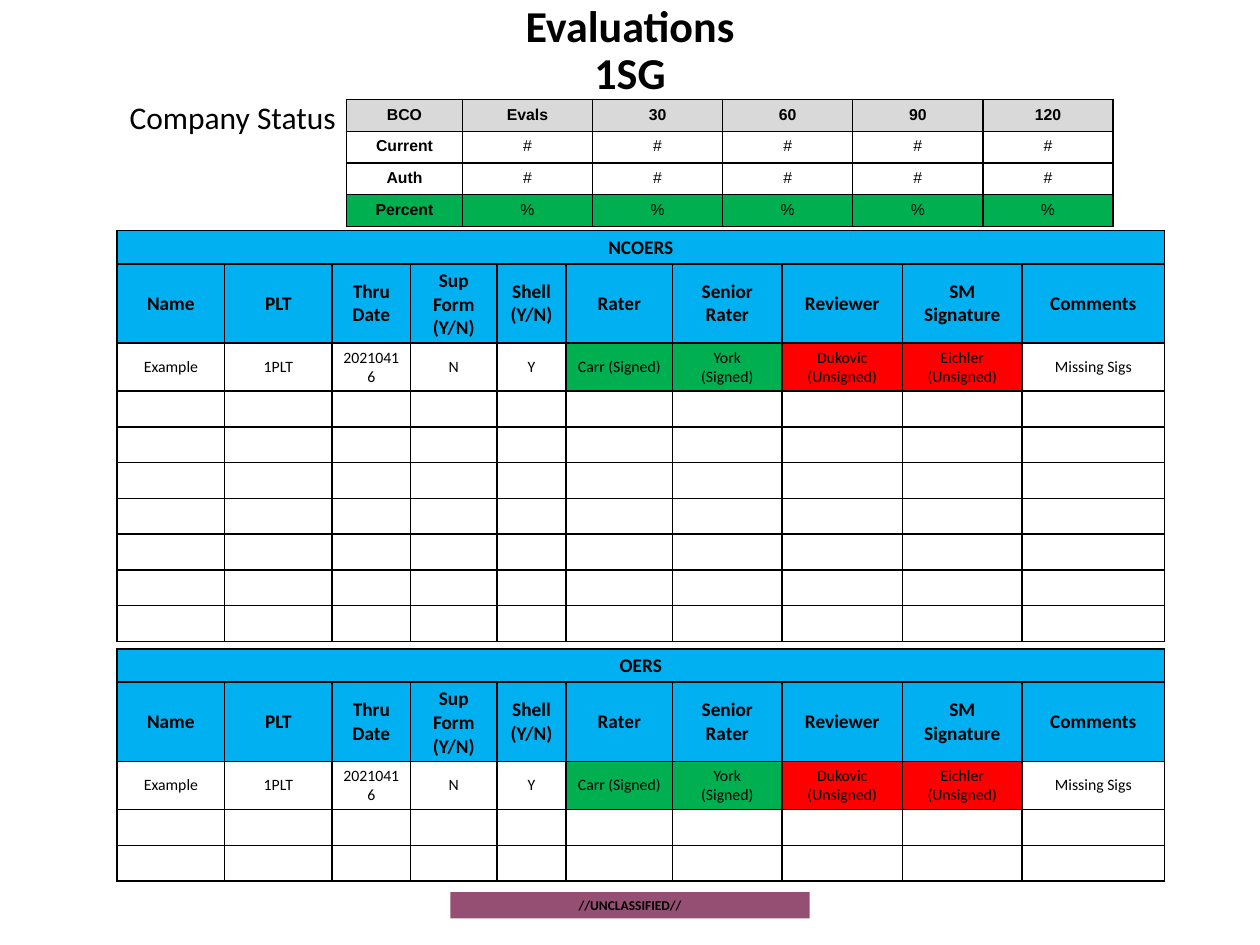
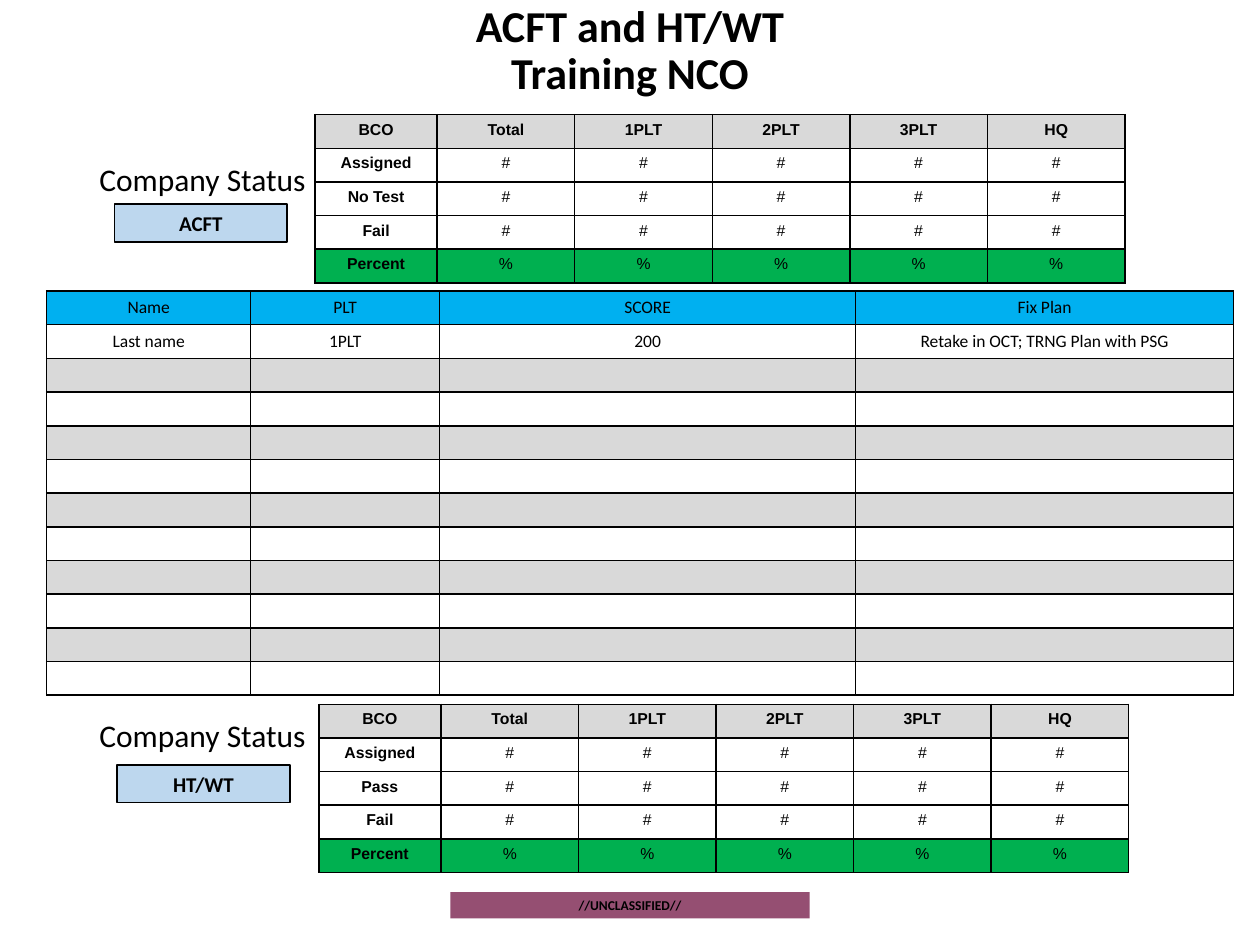
from lxml import etree
from pptx import Presentation
from pptx.dml.color import RGBColor
from pptx.enum.shapes import MSO_SHAPE
from pptx.enum.text import MSO_ANCHOR, PP_ALIGN
from pptx.oxml.ns import qn
from pptx.util import Inches, Pt

RECTANGLE = MSO_SHAPE.RECTANGLE
TOP, MIDDLE = MSO_ANCHOR.TOP, MSO_ANCHOR.MIDDLE
LEFT, CENTER = PP_ALIGN.LEFT, PP_ALIGN.CENTER

BLACK = RGBColor(0x00, 0x00, 0x00)
WHITE = RGBColor(0xFF, 0xFF, 0xFF)
GRAY = RGBColor(0xD9, 0xD9, 0xD9)
GREEN = RGBColor(0x00, 0xB0, 0x50)
RED = RGBColor(0xFF, 0x00, 0x00)
SKY = RGBColor(0x00, 0xB0, 0xF0)
PALE_BLUE = RGBColor(0xBD, 0xD7, 0xEE)
PLUM = RGBColor(0x95, 0x4F, 0x72)

BODY_FONT, STATUS_FONT = "Calibri", "Arial"
SLIDE_WIDTH, SLIDE_HEIGHT = Inches(10), Inches(7.5)
BLANK_LAYOUT = 6
WIDE_MARGINS = (Inches(0.1), Inches(0.05))
TIGHT_MARGINS = (Inches(0.07), Inches(0.04))

EVALUATION_HEADS = ["Name", "PLT", "Thru Date", "Sup Form (Y/N)", "Shell (Y/N)",
                    "Rater", "Senior Rater", "Reviewer", "SM Signature", "Comments"]
EVALUATION_EXAMPLE = ["Example", "1PLT", "20210416", "N", "Y", "Carr (Signed)",
                      "York\n(Signed)", "Dukovic\n(Unsigned)",
                      "Eichler\n(Unsigned)", "Missing Sigs"]
EVALUATION_COLUMNS = [8.53, 8.53, 6.23, 6.87, 5.48, 8.45, 8.69, 9.56, 9.5, 11.3]
PLATOON_HEADS = ["BCO", "Total", "1PLT", "2PLT", "3PLT", "HQ"]


def across(percent):
    """Return a share of the slide's width."""
    return round(SLIDE_WIDTH * percent / 100)


def down(percent):
    """Return a share of the slide's height."""
    return round(SLIDE_HEIGHT * percent / 100)


def place(left, top, width, height):
    """Turn percentages of the slide into a position and a size."""
    return across(left), down(top), across(width), down(height)


def set_margins(target, margins):
    """Set the side margins and the upper and lower margins."""
    target.margin_left = target.margin_right = margins[0]
    target.margin_top = target.margin_bottom = margins[1]


def style_text(frame, size, bold=False, font=BODY_FONT, align=CENTER):
    """Format every paragraph of a text frame, empty ones included."""
    for para in frame.paragraphs:
        para.alignment = align
        for span in para.runs:
            span.font.name = font
            span.font.size = Pt(size)
            span.font.bold = bold
            span.font.color.rgb = BLACK
        if not para.runs:
            etree.SubElement(para._p, qn("a:endParaRPr"), sz=str(size * 100))


def add_text(slide, area, text, size, bold=False, align=LEFT, anchor=TOP):
    """Add a text box and return its text frame."""
    frame = slide.shapes.add_textbox(*area).text_frame
    frame.word_wrap = True
    frame.vertical_anchor = anchor
    frame.text = text
    style_text(frame, size, bold, align=align)
    return frame


def add_bar(slide, area, text, size, fill, outlined=False):
    """Add a filled rectangle with a bold centred label."""
    bar = slide.shapes.add_shape(RECTANGLE, *area)
    bar.shadow.inherit = False
    bar.fill.solid()
    bar.fill.fore_color.rgb = fill
    if outlined:
        bar.line.color.rgb = BLACK
        bar.line.width = Pt(1)
    else:
        bar.line.fill.background()
    frame = bar.text_frame
    frame.word_wrap = True
    frame.vertical_anchor = MIDDLE
    set_margins(frame, TIGHT_MARGINS)
    frame.text = text
    style_text(frame, size, bold=True)


def add_borders(cell):
    """Draw a black line of one point on all sides of a cell."""
    properties = cell._tc.get_or_add_tcPr()
    for side in ("lnL", "lnR", "lnT", "lnB"):
        line = etree.SubElement(properties, qn(f"a:{side}"), w=str(Pt(1)))
        color = etree.SubElement(line, qn("a:solidFill"))
        etree.SubElement(color, qn("a:srgbClr"), val=str(BLACK))


def add_grid(slide, corner, columns, heights, texts, look, font=BODY_FONT,
             anchor=MIDDLE, margins=WIDE_MARGINS):
    """Add a table; look gives the fill, size and weight of each cell."""
    area = place(*corner, sum(columns), sum(heights))
    table = slide.shapes.add_table(len(heights), len(columns), *area).table
    table.first_row = table.horz_banding = False
    for column, width in zip(table.columns, columns):
        column.width = across(width)
    for row, height in zip(table.rows, heights):
        row.height = down(height)
    for r in range(len(heights)):
        for c in range(len(columns)):
            cell = table.cell(r, c)
            if r < len(texts) and c < len(texts[r]):
                cell.text = texts[r][c]
            fill, size, bold = look(r, c)
            set_margins(cell, margins)
            cell.vertical_anchor = anchor
            add_borders(cell)
            cell.fill.solid()
            cell.fill.fore_color.rgb = fill
            style_text(cell.text_frame, size, bold, font)
    return table


def add_status(slide, corner, columns, row_height, heads, counts):
    """Add a company status table with a green percent row."""
    values = len(heads) - 1
    texts = [heads]
    texts += [[name] + ["#"] * values for name in counts]
    texts.append(["Percent"] + ["%"] * values)
    fills = [GRAY] + [WHITE] * len(counts) + [GREEN]

    def look(row, column):
        """Embolden the first row and the first column."""
        return fills[row], 9, row == 0 or column == 0

    first, other = columns
    add_grid(slide, corner, [first] + [other] * values,
             [row_height] * len(texts), texts, look, STATUS_FONT, TOP)


def add_evaluations(slide, corner, heading, empty_rows):
    """Add an evaluation table with a heading, an example and empty rows."""
    signatures = {5: GREEN, 6: GREEN, 7: RED, 8: RED}

    def look(row, column):
        """Colour the two head rows and the signatures of the example."""
        if row < 2:
            return SKY, 11, True
        return signatures.get(column, WHITE) if row == 2 else WHITE, 9, False

    table = add_grid(slide, corner, EVALUATION_COLUMNS,
                     [3.5, 8.4, 5] + [3.79] * empty_rows,
                     [[heading], EVALUATION_HEADS, EVALUATION_EXAMPLE],
                     look, margins=TIGHT_MARGINS)
    table.cell(0, 0).merge(table.cell(0, len(EVALUATION_COLUMNS) - 1))


def add_fix_plans(slide):
    """Add the banded list of soldiers and their fix plans."""
    def look(row, column):
        """Alternate gray and white below the head row."""
        if row == 0:
            return SKY, 10, False
        return WHITE if row % 2 else GRAY, 10, False

    add_grid(slide, (3.7, 30.8), [16.2, 15, 33, 30], [3.56] * 12,
             [["Name", "PLT", "SCORE", "Fix Plan"],
              ["Last name", "1PLT", "200", "Retake in OCT; TRNG Plan with PSG"]],
             look)


def add_page(deck, title):
    """Add a slide with the shared title and classification bar."""
    page = deck.slides.add_slide(deck.slide_layouts[BLANK_LAYOUT])
    add_bar(page, place(35.75, 94.4, 28.5, 2.8), "//UNCLASSIFIED//", 7.7, PLUM)
    frame = add_text(page, place(6.9, 1.2, 86.2, 8.53), title, 25.2,
                     True, CENTER, MIDDLE)
    frame.paragraphs[0].line_spacing = 0.9
    return page


def add_status_label(slide, left, top, width):
    """Add the caption beside a status table."""
    add_text(slide, place(left, top, width, 5.33), "Company Status", 18)


def build_evaluations(deck):
    """Build the slide on evaluations."""
    page = add_page(deck, "Evaluations\v1SG")
    add_evaluations(page, (9.3, 24.4), "NCOERS", 7)
    add_status_label(page, 9.3, 9.73, 20.5)
    add_status(page, (27.5, 10.53), (9.2, 10.33), 3.36,
               ["BCO", "Evals", "30", "60", "90", "120"], ["Current", "Auth"])
    add_evaluations(page, (9.3, 68.67), "OERS", 2)


def build_fitness(deck):
    """Build the slide on fitness tests and body measurements."""
    page = add_page(deck, "ACFT and HT/WT\vTraining NCO")
    add_fix_plans(page)
    sections = [("ACFT", "No Test", (25, 12.13), 16.27, (9.1, 21.6)),
                ("HT/WT", "Pass", (25.3, 74.53), 75.07, (9.3, 80.93))]
    for test, second_count, corner, label_top, badge in sections:
        add_status(page, corner, (9.7, 10.92), 3.56, PLATOON_HEADS,
                   ["Assigned", second_count, "Fail"])
        add_status_label(page, 6.9, label_top, 25)
        add_bar(page, place(*badge, 13.7, 4), test, 12, PALE_BLUE, outlined=True)


def main():
    """Build and save the deck."""
    deck = Presentation()
    deck.slide_width, deck.slide_height = SLIDE_WIDTH, SLIDE_HEIGHT
    build_evaluations(deck)
    build_fitness(deck)
    deck.save("out.pptx")


if __name__ == "__main__":
    main()
